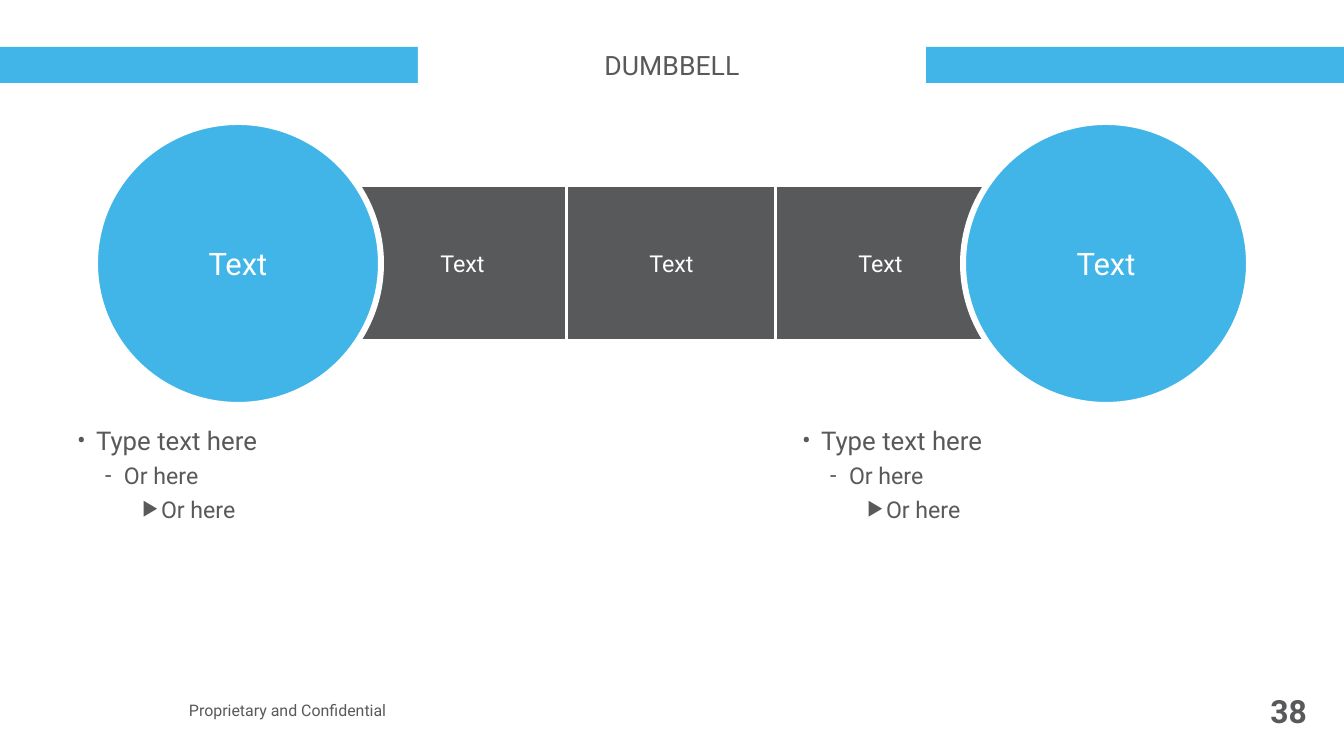
from lxml import etree
from pptx import Presentation
from pptx.dml.color import RGBColor
from pptx.enum.shapes import MSO_SHAPE
from pptx.enum.text import MSO_ANCHOR, MSO_AUTO_SIZE, PP_ALIGN
from pptx.oxml.ns import qn
from pptx.util import Pt

RECT, OVAL, ROUND = MSO_SHAPE.RECTANGLE, MSO_SHAPE.OVAL, MSO_SHAPE.ROUNDED_RECTANGLE
MIDDLE, TOP = MSO_ANCHOR.MIDDLE, MSO_ANCHOR.TOP
LEFT, CENTER, RIGHT = PP_ALIGN.LEFT, PP_ALIGN.CENTER, PP_ALIGN.RIGHT
FIXED = MSO_AUTO_SIZE.NONE

PX = 9555
FONT = "Roboto"
COLORS = {"blue": "41B5E8", "gray": "58595B", "white": "FFFFFF"}
HUES = {name: RGBColor.from_string(code) for name, code in COLORS.items()}


def draw(kind, box, fill=None, line=0):
    shape = slide.shapes.add_shape(kind, *[n * PX for n in box])
    shape.shadow.inherit = False
    if fill:
        shape.fill.solid()
        shape.fill.fore_color.rgb = HUES[fill]
    else:
        shape.fill.background()
    if line:
        shape.line.color.rgb = HUES["white"]
        shape.line.width = Pt(line)
    else:
        shape.line.fill.background()
    return shape


def write(shape, text, sizes, hue="gray", align=LEFT, anchor=MIDDLE, inset=4, wrap=True, bold=False):
    frame = shape.text_frame
    frame.text = text
    frame.auto_size = FIXED
    frame.word_wrap = wrap
    frame.vertical_anchor = anchor
    frame.margin_left = frame.margin_right = inset * PX
    frame.margin_top = frame.margin_bottom = inset * PX
    for para, size in zip(frame.paragraphs, sizes):
        para.alignment = align
        para.space_before = Pt(0)
        for run in para.runs:
            run.font.name = FONT
            run.font.size = Pt(size)
            run.font.bold = bold
            run.font.color.rgb = HUES[hue]


deck = Presentation()
deck.slide_width, deck.slide_height = 1344 * PX, 756 * PX
slide = deck.slides.add_slide(deck.slide_layouts[3])
title, *lists = slide.placeholders

band = draw(RECT, (0, 47, 1344, 36), "blue")
title.element.addprevious(band.element)

title.left, title.top, title.width, title.height = 418 * PX, 39 * PX, 508 * PX, 52 * PX
title.fill.solid()
title.fill.fore_color.rgb = HUES["white"]
write(title, "DUMBBELL", [20], align=CENTER, inset=10)

LEVELS = [
    ("Type text here", 19.4, "•", 100, 19, 19, 0),
    ("Or here", 17.4, "-", 100, 47, 19, 4.2),
    ("Or here", 17.4, "‣", 140, 84, 20, 4.2),
]
for body, x in zip(lists, (72, 797)):
    body.left, body.top, body.width, body.height = x * PX, 420 * PX, 536 * PX, 108 * PX
    write(body, "\n".join(row[0] for row in LEVELS), [row[1] for row in LEVELS], anchor=TOP, inset=5)
    for depth, (para, row) in enumerate(zip(body.text_frame.paragraphs, LEVELS)):
        mark, scale, margin, hang, gap = row[2:]
        para.level = depth
        para.space_before = Pt(gap)
        props = para._p.get_or_add_pPr()
        props.set("marL", str(margin * PX))
        props.set("indent", str(-hang * PX))
        etree.SubElement(props, qn("a:buSzPct"), val=str(scale * 1000))
        etree.SubElement(props, qn("a:buFont"), typeface=FONT)
        etree.SubElement(props, qn("a:buChar"), char=mark)

for i in range(3):
    bar = draw(RECT, (358 + 209 * i, 186, 209, 155), "gray", 2.25)
    write(bar, "Text", [17.5], "white", CENTER, wrap=False)

for x in (95, 963):
    weight = draw(OVAL, (x, 122, 286, 283), "blue", 4.5)
    write(weight, "Text", [23.3], "white", CENTER, wrap=False)

footer = slide.shapes.add_textbox(185 * PX, 679 * PX, 334 * PX, 62 * PX)
write(footer, "Proprietary and Confidential", [12])

number = draw(ROUND, (1252, 691, 57, 39))
write(number, "38", [24], align=RIGHT, inset=0, wrap=False, bold=True)

deck.save("out.pptx")
